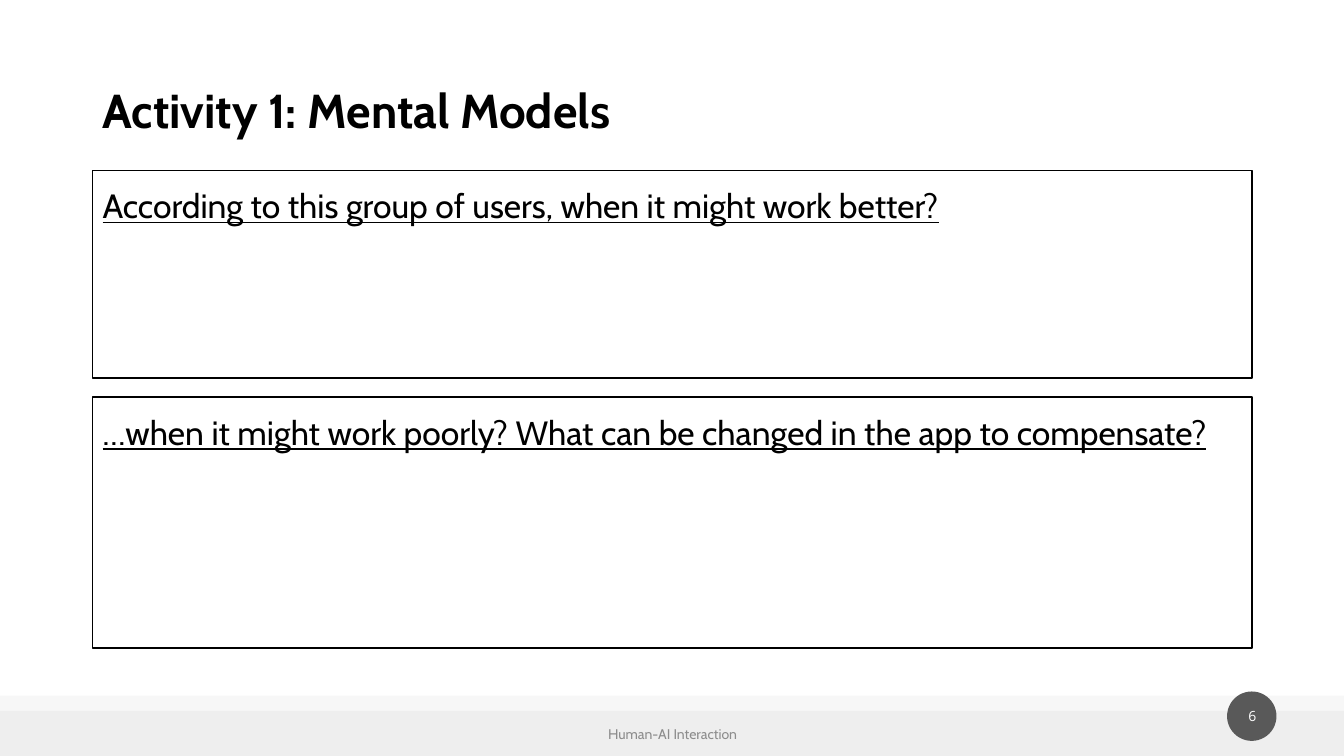
from lxml import etree
from pptx import Presentation
from pptx.dml.color import RGBColor
from pptx.enum import shapes, text
from pptx.oxml import ns
from pptx.util import Inches, Pt

BLACK = RGBColor(0x00, 0x00, 0x00)
WHITE = RGBColor(0xFF, 0xFF, 0xFF)
BAND_GREY = RGBColor(0xEE, 0xEE, 0xEE)
BADGE_GREY = RGBColor(0x59, 0x59, 0x59)
FOOTER_GREY = RGBColor(0x8C, 0x8C, 0x8C)
RECT = shapes.MSO_SHAPE.RECTANGLE
OVAL = shapes.MSO_SHAPE.OVAL
CENTER = text.PP_ALIGN.CENTER
LEFT = text.PP_ALIGN.LEFT
TOP = text.MSO_ANCHOR.TOP
MIDDLE = text.MSO_ANCHOR.MIDDLE


def add_panel(slide, box, kind, fill, border=None):
    panel = slide.shapes.add_shape(kind, *map(Inches, box))
    panel.shadow.inherit = False
    panel.fill.solid()
    panel.fill.fore_color.rgb = fill
    if border is None:
        panel.line.fill.background()
    else:
        panel.line.color.rgb = border
        panel.line.width = Pt(1)
    return panel


def write(holder, wording, size, color, align=LEFT, anchor=MIDDLE, face="Cabin"):
    frame = holder.text_frame
    frame.word_wrap = True
    frame.vertical_anchor = anchor
    line = frame.paragraphs[0]
    line.text = wording
    line.alignment = align
    font = line.runs[0].font
    font.size = Pt(size)
    font.name = face
    font.color.rgb = color
    return line


def add_label(slide, box, wording, size, color, **style):
    label = slide.shapes.add_textbox(*map(Inches, box))
    return write(label, wording, size, color, **style)


def add_footer(slide, box, wording, number):
    left, top, width, height = box
    strip = 0.15
    add_panel(slide, (left, top + strip, width, height - strip), RECT, BAND_GREY)
    tint = add_panel(slide, (left, top, width, strip), RECT, BAND_GREY)
    tint_color = tint.fill._xPr.find(".//" + ns.qn("a:srgbClr"))
    etree.SubElement(tint_color, ns.qn("a:alpha"), val="47000")

    add_panel(slide, (left + 12.17, top - 0.04, 0.49, 0.49), OVAL, BADGE_GREY)
    add_label(slide, (left + 12.12, top - 0.01, 0.6, 0.43), number, 10, WHITE,
              align=CENTER, face="Open Sans")
    add_label(slide, (left + 4.42, top + 0.18, 4.5, 0.4), wording, 10,
              FOOTER_GREY, align=CENTER)


def add_title(slide, box, wording):
    title = add_label(slide, box, wording, 34, BLACK)
    title.line_spacing = 0.9
    title.runs[0].font.bold = True


def add_question(slide, box, wording):
    panel = add_panel(slide, box, RECT, WHITE, BLACK)
    question = write(panel, wording, 24, BLACK, anchor=TOP)
    question.line_spacing = 1.25
    question.space_before = Pt(10)
    question.runs[0].font.underline = True


def main():
    deck = Presentation()
    deck.slide_width = Inches(13.33)
    deck.slide_height = Inches(7.5)
    slide = deck.slides.add_slide(deck.slide_layouts[6])

    add_footer(slide, (0, 6.9, 13.33, 0.6), "Human-AI Interaction", "6")
    margin, width = 0.92, 11.5
    add_title(slide, (margin, 0.4, width, 1.45), "Activity 1: Mental Models")
    questions = [
        (1.69, 2.06, "According to this group of users, when it might work better?"),
        (3.94, 2.49, "…when it might work poorly? What can be changed in the app to compensate?"),
    ]
    for top, height, wording in questions:
        add_question(slide, (margin, top, width, height), wording)

    deck.save("out.pptx")


if __name__ == "__main__":
    main()
